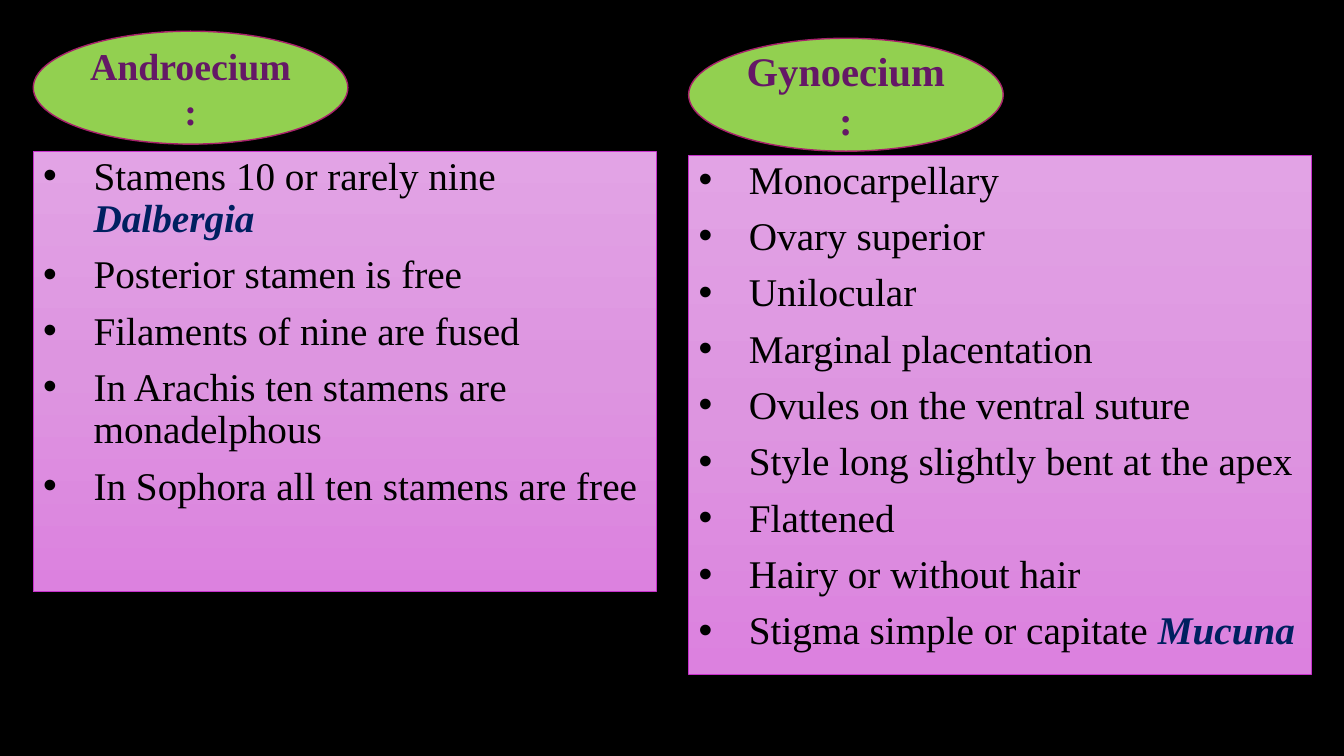
from copy import deepcopy
from dataclasses import dataclass

from lxml import etree
from pptx import Presentation
from pptx import util as u
from pptx.dml.color import RGBColor
from pptx.enum import shapes, text
from pptx.oxml import ns

FONT = "Times New Roman"
BLACK = RGBColor(0x00, 0x00, 0x00)
GREEN = RGBColor(0x92, 0xD0, 0x50)
BERRY = RGBColor(0xA8, 0x21, 0x6B)
PLUM = RGBColor(0x64, 0x18, 0x66)
NAVY = RGBColor(0x00, 0x20, 0x60)
ORCHID = RGBColor(0xC8, 0x30, 0xCC)
SHADES = (
    (0, RGBColor(0xE2, 0xA3, 0xE5)),
    (0.5, RGBColor(0xDD, 0x95, 0xE0)),
    (1, RGBColor(0xDC, 0x81, 0xDF)),
)


@dataclass
class Item:
    words: str
    genus: str = ""


@dataclass
class Column:
    title: str
    size: int
    left: float
    top: float
    panel_top: float
    height: float
    items: list[Item]


COLUMNS = [
    Column("Androecium:", 27, 0.33, 0.31, 1.5, 4.37, [
        Item("Stamens 10 or rarely nine ", "Dalbergia"),
        Item("Posterior stamen is free"),
        Item("Filaments of nine are fused"),
        Item("In Arachis ten stamens are monadelphous"),
        Item("In Sophora all ten stamens are free"),
    ]),
    Column("Gynoecium:", 29, 6.83, 0.38, 1.54, 5.15, [
        Item("Monocarpellary"),
        Item("Ovary superior"),
        Item("Unilocular"),
        Item("Marginal placentation"),
        Item("Ovules on the ventral suture"),
        Item("Style long slightly bent at the apex"),
        Item("Flattened"),
        Item("Hairy or without hair"),
        Item("Stigma simple or capitate ", "Mucuna"),
    ]),
]


def add_box(slide, kind, left: float, top: float, width: float, height: float,
            edge: RGBColor, weight: float):
    box = slide.shapes.add_shape(
        kind, u.Inches(left), u.Inches(top), u.Inches(width), u.Inches(height))
    box.shadow.inherit = False
    box.line.color.rgb = edge
    box.line.width = u.Pt(weight)
    box.text_frame.word_wrap = True
    return box


def shade(fill) -> None:
    """Fill from top to bottom with the three shades."""
    fill.gradient()
    fill.gradient_angle = 270
    stops = fill._fill._gradFill.find(ns.qn("a:gsLst"))
    stops.append(deepcopy(stops[-1]))
    for stop, (place, color) in zip(fill.gradient_stops, SHADES):
        stop.position = place
        stop.color.rgb = color


def add_title(slide, col: Column) -> None:
    oval = add_box(slide, shapes.MSO_SHAPE.OVAL, col.left, col.top, 3.12, 1.12, BERRY, 1)
    oval.fill.solid()
    oval.fill.fore_color.rgb = GREEN
    oval.text_frame.vertical_anchor = text.MSO_ANCHOR.MIDDLE
    para = oval.text_frame.paragraphs[0]
    para.text = col.title
    para.alignment = text.PP_ALIGN.CENTER
    para.font.name, para.font.size, para.font.bold = FONT, u.Pt(col.size), True
    para.font.color.rgb = PLUM


def add_item(para, item: Item, first: bool) -> None:
    props = para._p.get_or_add_pPr()
    props.set("marL", str(u.Inches(0.5)))
    props.set("indent", str(-u.Inches(0.5)))
    etree.SubElement(props, ns.qn("a:buFont")).set("typeface", "Arial")
    etree.SubElement(props, ns.qn("a:buChar")).set("char", "•")
    para.alignment = text.PP_ALIGN.LEFT
    para.line_spacing = 0.9
    if not first:
        para.space_before = u.Pt(10)
    para.font.name, para.font.size = FONT, u.Pt(28)
    para.font.color.rgb = BLACK
    para.add_run().text = item.words
    if item.genus:
        run = para.add_run()
        run.text = item.genus
        run.font.bold = run.font.italic = True
        run.font.color.rgb = NAVY


def add_panel(slide, col: Column) -> None:
    panel = add_box(slide, shapes.MSO_SHAPE.RECTANGLE, col.left, col.panel_top,
                    6.18, col.height, ORCHID, 0.5)
    shade(panel.fill)
    frame = panel.text_frame
    frame.vertical_anchor = text.MSO_ANCHOR.TOP
    for i, item in enumerate(col.items):
        para = frame.add_paragraph() if i else frame.paragraphs[0]
        add_item(para, item, i == 0)


def main() -> None:
    deck = Presentation()
    deck.slide_width, deck.slide_height = u.Inches(13.33), u.Inches(7.5)
    slide = deck.slides.add_slide(deck.slide_layouts[6])
    slide.background.fill.solid()
    slide.background.fill.fore_color.rgb = BLACK
    # Each column is a heading oval over a bulleted panel
    for col in COLUMNS:
        add_title(slide, col)
        add_panel(slide, col)
    deck.save("out.pptx")


if __name__ == "__main__":
    main()
